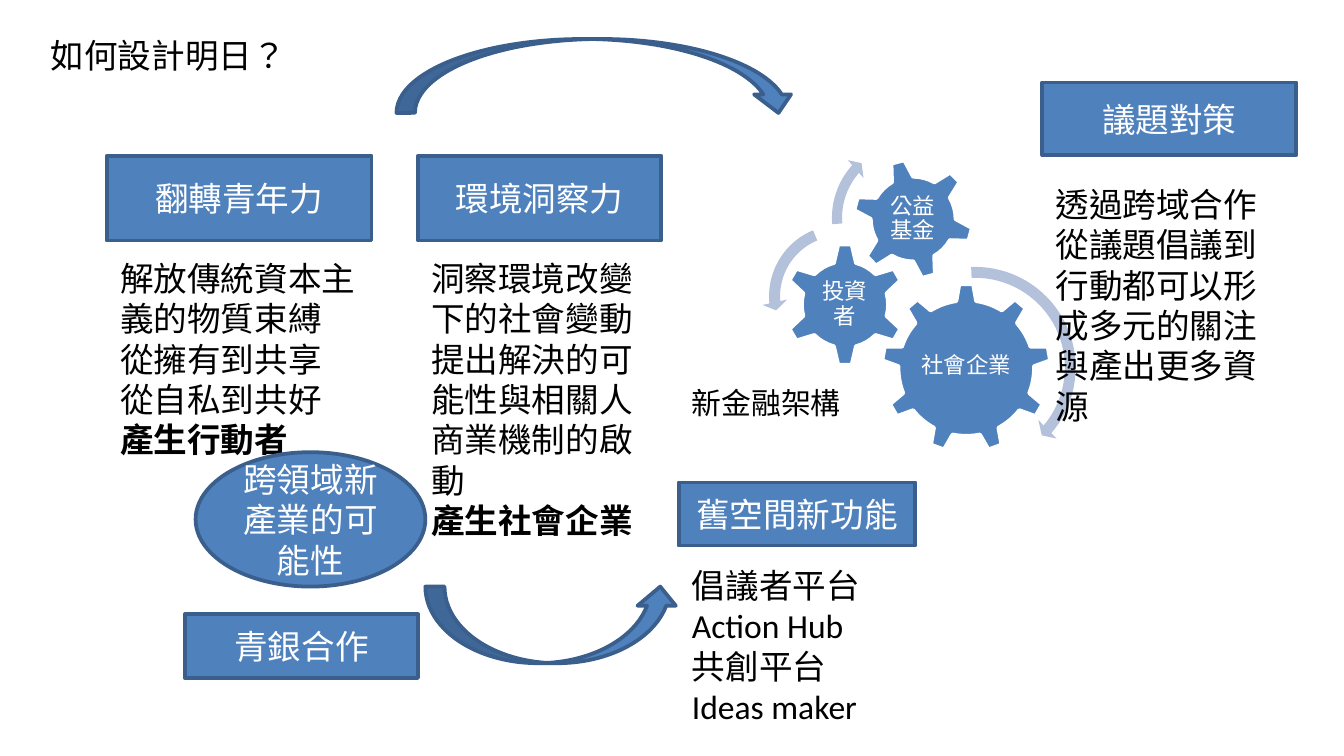
from typing import NamedTuple

from pptx import Presentation
from pptx.dml.color import RGBColor
from pptx.enum.lang import MSO_LANGUAGE_ID
from pptx.enum.shapes import MSO_SHAPE
from pptx.enum.text import MSO_ANCHOR, MSO_AUTO_SIZE, PP_ALIGN
from pptx.util import Inches, Pt

RECT, OVAL = MSO_SHAPE.RECTANGLE, MSO_SHAPE.OVAL
DOWN, UP = MSO_SHAPE.CURVED_DOWN_ARROW, MSO_SHAPE.CURVED_UP_ARROW
GEAR6, GEAR9 = MSO_SHAPE.GEAR_6, MSO_SHAPE.GEAR_9
RIGHT, LEFT = MSO_SHAPE.CIRCULAR_ARROW, MSO_SHAPE.LEFT_CIRCULAR_ARROW
MIDDLE, CENTER = MSO_ANCHOR.MIDDLE, PP_ALIGN.CENTER
GROW = MSO_AUTO_SIZE.SHAPE_TO_FIT_TEXT
TONGUE = MSO_LANGUAGE_ID.TRADITIONAL_CHINESE

BLUE = RGBColor(0x4F, 0x81, 0xBD)
NAVY = RGBColor(0x3A, 0x5F, 0x8C)
PALE = RGBColor(0xB3, 0xC1, 0xDB)
WHITE = RGBColor(0xFF, 0xFF, 0xFF)
BLACK = RGBColor(0, 0, 0)
LATIN, HAN = "Calibri", "Noto Sans CJK SC"

COLS, ROWS = 100, 56.25
CELL = Inches(0.1)


class Box(NamedTuple):
    """Left, top, width and height in grid cells."""
    x: float
    y: float
    w: float
    h: float

    def emu(self) -> list[int]:
        return [round(n * CELL) for n in self]


class Card(NamedTuple):
    head: str
    box: Box
    font: str
    lines: tuple[str, ...] = ()
    top: float = 0
    tall: float = 0
    close: str = ""


class Gear(NamedTuple):
    kind: int
    box: Box
    turn: float
    text: str
    area: Box


class Ring(NamedTuple):
    kind: int
    box: Box
    adjust: tuple[float, ...]


CARDS = (
    Card("翻轉青年力", Box(7.95, 11.6, 19.7, 6.3), HAN,
         ("解放傳統資本主義的物質束縛", "從擁有到共享", "從自私到共好"),
         18.7, 16.2, "產生行動者"),
    Card("環境洞察力", Box(31.1, 11.6, 18.1, 6.3), HAN,
         ("洞察環境改變下的社會變動", "提出解決的可能性與相關人", "商業機制的啟動"),
         18.7, 22.2, "產生社會企業"),
    Card("舊空間新功能", Box(50.5, 35.9, 17.6, 4.7), LATIN,
         ("倡議者平台", "Action Hub", "共創平台", "Ideas maker"), 41.55, 13.1),
    Card("青銀合作", Box(13.75, 45.7, 17.35, 4.75), LATIN),
    Card("議題對策", Box(77.55, 6.15, 18.9, 5.4), LATIN,
         ("透過跨域合作從議題倡議到行動都可以形成多元的關注與產出更多資源",),
         13.2, 19.2),
)
GEARS = (
    Gear(GEAR9, Box(65.6, 21.1, 12.6, 12.6), 0, "社會企業",
         Box(68.15, 24, 7.5, 6.5)),
    Gear(GEAR6, Box(58.3, 18.1, 9.15, 9.15), 0, "投資者",
         Box(60.6, 20.4, 4.55, 4.55)),
    Gear(GEAR6, Box(63.45, 11.8, 9, 9), 345, "公益基金",
         Box(65.4, 13.8, 5, 5)),
)
RINGS = (
    Ring(RIGHT, Box(64.5, 19.3, 16.1, 16.1), (0.05, 2.99, 24.28, 160.67, 0.06)),
    Ring(LEFT, Box(56.7, 16.2, 11.7, 11.7), (0.07, 4.3, 104.89, 148.38, 0.08)),
    Ring(RIGHT, Box(61.4, 9.9, 12.6, 12.6), (0.06, 3.94, 133.14, 105.08, 0.07)),
)
SWEEPS = ((DOWN, Box(29.5, 2.9, 29.8, 5.5)), (UP, Box(31.65, 43.65, 18.9, 5.7)))


def add_run(para, text: str, font: str, size: float, color: RGBColor,
            bold: bool = False) -> None:
    run = para.add_run()
    run.text = text
    run.font.language_id = TONGUE
    run.font.name, run.font.size = font, Pt(size)
    run.font.color.rgb = color
    if bold:
        run.font.bold = True


def add_form(shapes, kind: int, box: Box, fill: RGBColor = BLUE,
             edge: RGBColor | None = NAVY):
    form = shapes.add_shape(kind, *box.emu())
    form.shadow.inherit = False
    form.fill.solid()
    form.fill.fore_color.rgb = fill
    if edge is None:
        form.line.fill.background()
    else:
        form.line.color.rgb = edge
        form.line.width = Pt(2)
    return form


def add_label(shapes, kind: int, box: Box, text: str, font: str) -> None:
    frame = add_form(shapes, kind, box).text_frame
    frame.word_wrap = True
    frame.vertical_anchor = MIDDLE
    para = frame.paragraphs[0]
    para.alignment = CENTER
    add_run(para, text, font, 18, WHITE)


def add_note(shapes, box: Box, lines: tuple[str, ...], font: str,
             size: float = 18, close: str = "") -> None:
    """Write one paragraph a line, and the closing one in bold."""
    frame = shapes.add_textbox(*box.emu()).text_frame
    frame.word_wrap = True
    frame.auto_size = GROW
    rows = [(line, False) for line in lines]
    if close:
        rows.append((close, True))
    for i, (text, bold) in enumerate(rows):
        para = frame.add_paragraph() if i else frame.paragraphs[0]
        add_run(para, text, font, size, BLACK, bold)


def add_card(shapes, card: Card) -> None:
    add_label(shapes, RECT, card.box, card.head, card.font)
    if card.lines:
        area = Box(card.box.x, card.top, card.box.w, card.tall)
        add_note(shapes, area, card.lines, card.font, close=card.close)


def add_gear(shapes, gear: Gear) -> None:
    add_form(shapes, gear.kind, gear.box, edge=WHITE).rotation = gear.turn
    frame = shapes.add_textbox(*gear.area.emu()).text_frame
    frame.word_wrap = True
    frame.vertical_anchor = MIDDLE
    frame.margin_left = frame.margin_right = Inches(0.02)
    frame.margin_top = frame.margin_bottom = Inches(0.02)
    para = frame.paragraphs[0]
    para.alignment, para.line_spacing = CENTER, 0.9
    add_run(para, gear.text, LATIN, 12, WHITE)


def add_ring(shapes, ring: Ring) -> None:
    form = add_form(shapes, ring.kind, ring.box, PALE, None)
    for i, value in enumerate(ring.adjust):
        form.adjustments[i] = value


def main() -> None:
    deck = Presentation()
    deck.slide_width, deck.slide_height = round(COLS * CELL), round(ROWS * CELL)
    shapes = deck.slides.add_slide(deck.slide_layouts[6]).shapes

    add_note(shapes, Box(2.8, 2.1, 28.3, 4), ("如何設計明日？",), HAN)
    group = shapes.add_group_shape().shapes
    for gear in GEARS:
        add_gear(group, gear)
    for ring in RINGS:
        add_ring(group, ring)
    add_note(shapes, Box(50.5, 28.15, 14.5, 3.7), ("新金融架構",), LATIN, 16)
    for card in CARDS:
        add_card(shapes, card)
    add_label(shapes, OVAL, Box(14.55, 33.65, 17.1, 10), "跨領域新產業的可能性", LATIN)
    for kind, box in SWEEPS:
        add_form(shapes, kind, box)

    deck.save("out.pptx")


if __name__ == "__main__":
    main()
